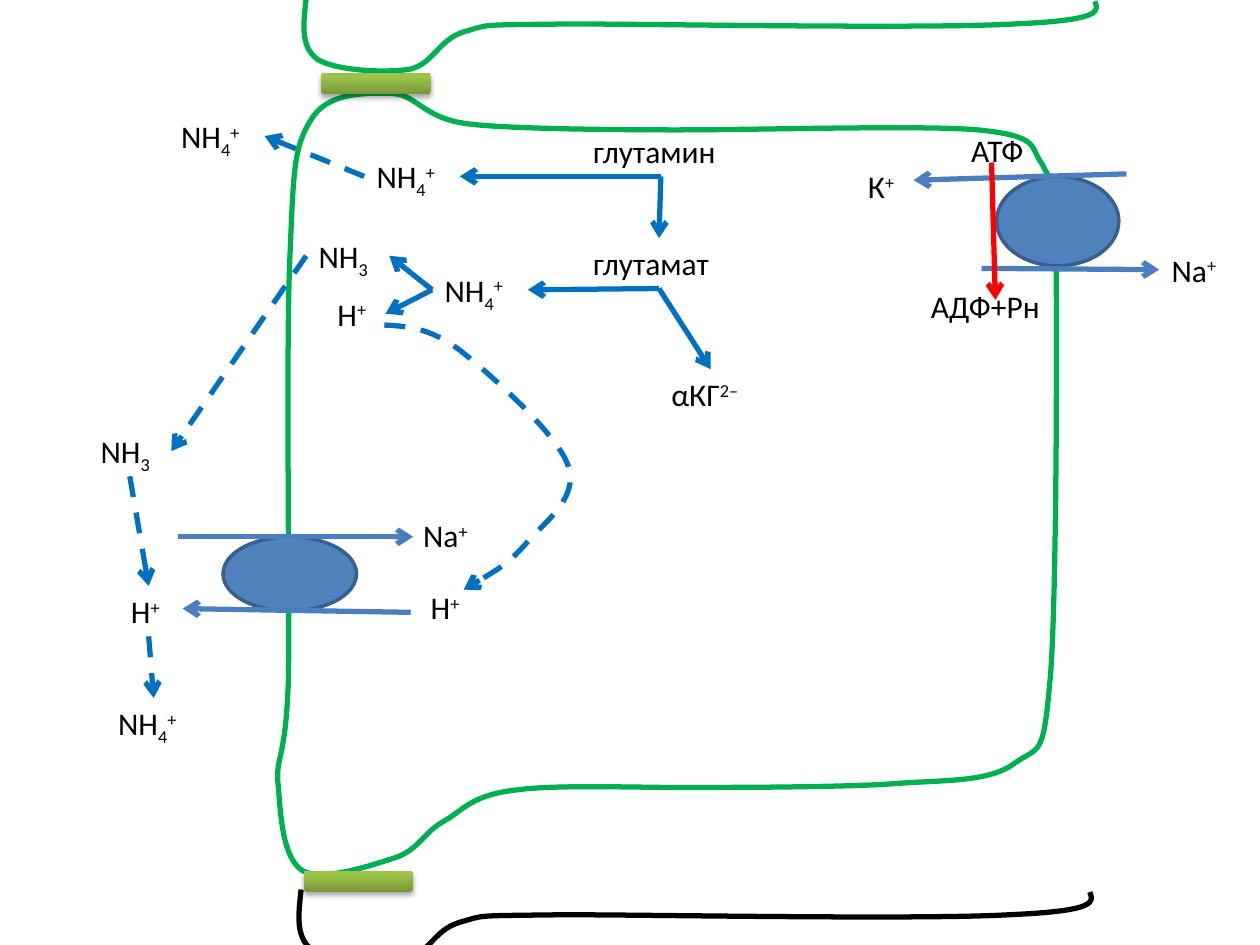
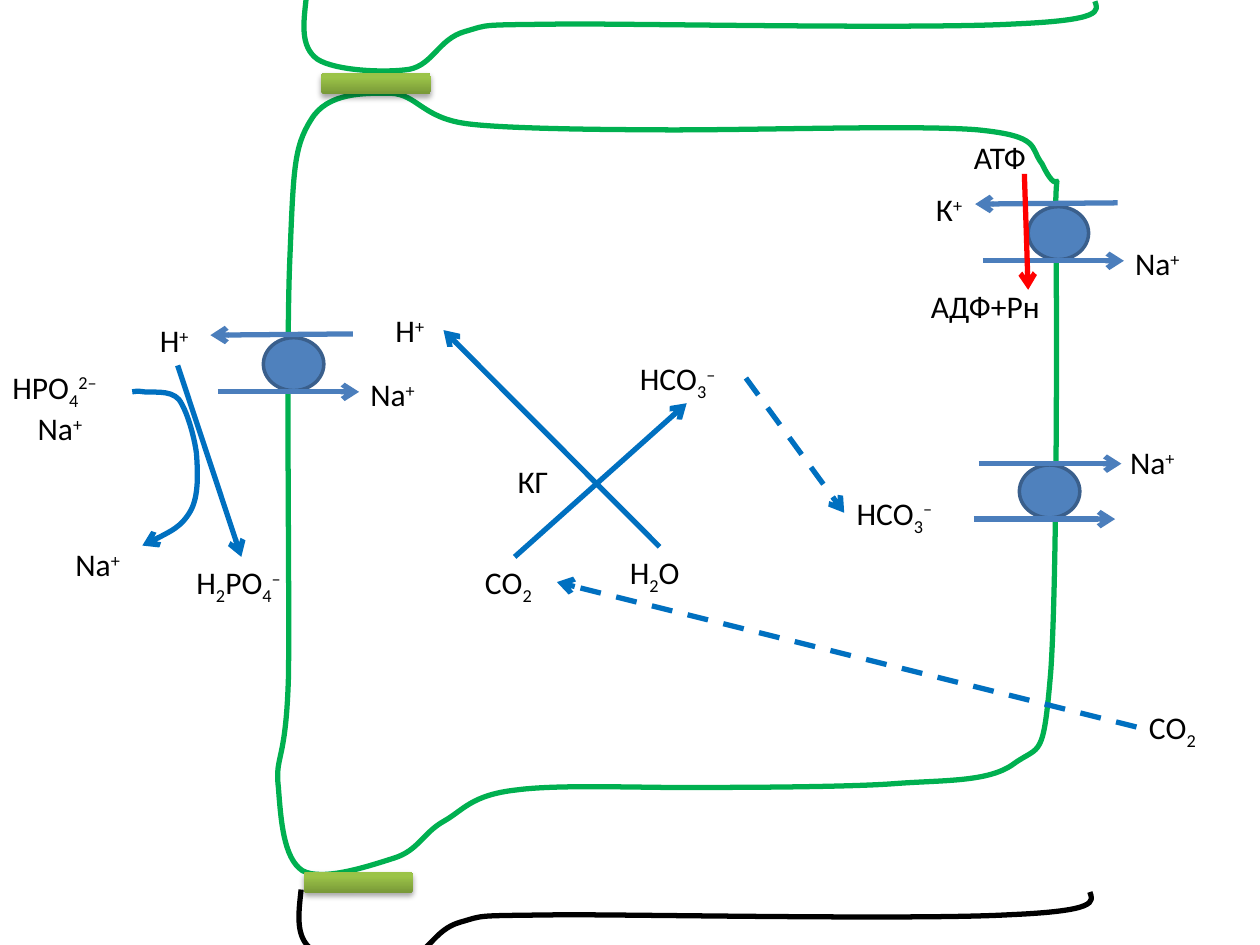
from dataclasses import dataclass
from typing import NamedTuple, Optional, Union

import pptx
import pptx.dml.color
import pptx.enum.dml
import pptx.enum.shapes
import pptx.enum.text
import pptx.oxml
import pptx.oxml.ns
import pptx.util

Inches = pptx.util.Inches
RGBColor = pptx.dml.color.RGBColor
SHAPES = pptx.enum.shapes.MSO_SHAPE
qn = pptx.oxml.ns.qn

BLACK = RGBColor(0x00, 0x00, 0x00)
MEMBRANE_GREEN = RGBColor(0x00, 0xB0, 0x50)
JUNCTION_DARK = RGBColor(0x77, 0x97, 0x37)
JUNCTION_LIGHT = RGBColor(0x9B, 0xC3, 0x48)
PUMP_FILL = RGBColor(0x4F, 0x81, 0xBD)
PUMP_EDGE = RGBColor(0x3A, 0x5F, 0x8C)
TRANSPORT_BLUE = RGBColor(0x4B, 0x7E, 0xBC)
REACTION_BLUE = RGBColor(0x00, 0x70, 0xC0)
ENERGY_RED = RGBColor(0xFF, 0x00, 0x00)

FONT = "Calibri"
LINE_WIDTH = pptx.util.Pt(3)
TOP, LEFT, BOTTOM, RIGHT = range(4)

# Runs are separated by "|"; "_" opens a subscript and "^" a superscript.
SODIUM, POTASSIUM, PROTON = "Na|^+", "К|^+", "Н|^+"
AMMONIUM, AMMONIA = "NН|_4|^+", "NН|_3"
BICARBONATE, CARBON_DIOXIDE, WATER = "НСО|_3|^–", "СО|_2", "Н|_2|О"
PHOSPHATE, DIHYDROPHOSPHATE = "НРО|_4|^2–", "Н|_2|РО|_4|^–"
ATP, ADP, ENZYME = "АТФ", "АДФ+Рн", "КГ"
GLUTAMINE, GLUTAMATE, KETOGLUTARATE = "глутамин", "глутамат", "αКГ|^2–"

BASELINES = {"_": "-25000", "^": "30000"}
LABEL_HEIGHT = 0.4
LABEL_WIDTHS = {
    SODIUM: 0.62, POTASSIUM: 0.45, PROTON: 0.48, AMMONIUM: 0.76, AMMONIA: 0.66,
    BICARBONATE: 0.94, CARBON_DIOXIDE: 0.67, WATER: 0.67, PHOSPHATE: 0.91,
    DIHYDROPHOSPHATE: 0.91, ATP: 0.69, ADP: 1.19, ENZYME: 0.49,
    GLUTAMINE: 1.27, GLUTAMATE: 1.24, KETOGLUTARATE: 0.82,
}

# Cubic curves: a start point, then three points for every segment.
CELL_OUTLINE = [
    (2.29, 5.37),
    (2.3, 4.68), (2.27, 2.82), (2.3, 2.08), (2.33, 1.35), (2.33, 1.17), (2.47, 0.95),
    (2.6, 0.73), (2.9, 0.74), (3.1, 0.74), (3.31, 0.75), (3.35, 0.93), (3.69, 0.98),
    (4.03, 1.03), (5.14, 1.03), (5.14, 1.03), (5.82, 1.04), (7.23, 0.99), (7.75, 1.03),
    (8.27, 1.08), (8.17, 1.17), (8.27, 1.3), (8.45, 1.67), (8.37, 1.13), (8.38, 1.8),
    (8.39, 2.47), (8.39, 4.62), (8.34, 5.33), (8.28, 6.04), (8.26, 5.91), (8.05, 6.06),
    (7.85, 6.21), (7.49, 6.19), (7.1, 6.22), (6.71, 6.25), (5.71, 6.25), (5.71, 6.25),
    (5.21, 6.26), (4.47, 6.22), (4.1, 6.27), (3.74, 6.31), (3.68, 6.43), (3.52, 6.52),
    (3.36, 6.61), (3.32, 6.75), (3.13, 6.81), (2.94, 6.87), (2.56, 7), (2.4, 6.91),
    (2.25, 6.81), (2.23, 6.51), (2.21, 6.25), (2.18, 5.99), (2.27, 6.07), (2.29, 5.37),
]
UPPER_NEIGHBOUR = [
    (2.43, -0.01),
    (2.41, 0.18), (2.38, 0.37), (2.52, 0.47), (2.66, 0.56), (3.05, 0.58), (3.25, 0.55),
    (3.44, 0.51), (3.48, 0.31), (3.69, 0.25), (3.9, 0.19), (3.78, 0.2), (4.51, 0.19),
    (5.23, 0.19), (7.35, 0.23), (8.05, 0.19), (8.75, 0.16), (8.72, 0.09), (8.69, 0.01),
]
LOWER_NEIGHBOUR = [(x - 0.04, y + 7.07) for x, y in UPPER_NEIGHBOUR]
PROTON_PATH = [
    (3.05, 2.58),
    (3.23, 2.59), (3.41, 2.6), (3.65, 2.78), (3.89, 2.97), (4.43, 3.45), (4.51, 3.7),
    (4.6, 3.96), (4.3, 4.16), (4.17, 4.32), (4.03, 4.48), (3.85, 4.58), (3.68, 4.68),
]
SODIUM_PATH = [
    (1.05, 3.11),
    (1.07, 3.11), (1.08, 3.1), (1.14, 3.11), (1.2, 3.12), (1.35, 3.09), (1.42, 3.17),
    (1.48, 3.25), (1.54, 3.45), (1.56, 3.6), (1.57, 3.75), (1.58, 3.94), (1.51, 4.06),
    (1.44, 4.18), (1.28, 4.26), (1.13, 4.33),
]


class Point(NamedTuple):
    x: float
    y: float


class Port(NamedTuple):
    """The middle of one side of a named label."""
    label: str
    side: int


@dataclass
class Label:
    name: str
    text: str
    left: float
    top: float


@dataclass
class Arrow:
    start: Union[Point, Port]
    end: Union[Point, Port]
    color: RGBColor = REACTION_BLUE
    dashed: bool = False


@dataclass
class Pump:
    left: float
    top: float
    width: float
    height: float
    flows: list[Arrow]


@dataclass
class CurvedArrow:
    points: list[tuple[float, float]]
    dashed: bool = False


@dataclass
class Scene:
    lower_junction_top: float
    pumps: list[Pump]
    energy: Arrow
    labels: list[Label]
    links: list[Arrow]
    curve: CurvedArrow


def flow(x1: float, y1: float, x2: float, y2: float, color: RGBColor = TRANSPORT_BLUE) -> Arrow:
    return Arrow(Point(x1, y1), Point(x2, y2), color)


def small_pump(left: float, top: float, exchange: bool = True) -> Pump:
    """An exchanger sends its upper flow to the left, a cotransporter to the right."""
    upper = (0.71, -0.03, -0.42, -0.02) if exchange else (-0.32, -0.01, 0.81, -0.01)
    flows = [flow(left + x1, top + y1, left + x2, top + y2)
             for x1, y1, x2, y2 in (upper, (-0.36, 0.43, 0.76, 0.43))]
    return Pump(left, top, 0.48, 0.42, flows)


def link(start: str, start_side: int, end: str, end_side: int, dashed: bool = False) -> Arrow:
    return Arrow(Port(start, start_side), Port(end, end_side), dashed=dashed)


def style_line(line, color: RGBColor, dashed: bool = False) -> None:
    line.color.rgb = color
    line.width = LINE_WIDTH
    if dashed:
        line.dash_style = pptx.enum.dml.MSO_LINE.DASH


def add_arrowhead(shape) -> None:
    ln = shape._element.spPr.find(qn("a:ln"))
    ln.append(pptx.oxml.parse_xml(f'<a:tailEnd {pptx.oxml.ns.nsdecls("a")} type="arrow"/>'))


def draw_curve(s, points: list[tuple[float, float]], color: RGBColor, closed: bool = False,
               dashed: bool = False, arrow: bool = False) -> None:
    emu = [(Inches(x), Inches(y)) for x, y in points]
    builder = s.shapes.build_freeform(*emu[0])
    builder.add_line_segments(emu[1:], close=closed)
    sp = builder.convert_to_shape()
    sp.shadow.inherit = False
    sp.fill.background()
    style_line(sp.line, color, dashed)
    if arrow:
        add_arrowhead(sp)
    segments = list(sp._element.iter(qn("a:lnTo")))
    for i in range(0, len(points) - 1, 3):
        triple = segments[i:i + 3]
        bezier = pptx.oxml.parse_xml(f'<a:cubicBezTo {pptx.oxml.ns.nsdecls("a")}/>')
        triple[0].addprevious(bezier)
        for segment in triple:
            bezier.append(segment[0])
            segment.getparent().remove(segment)


def draw_junction(s, left: float, top: float) -> None:
    sp = s.shapes.add_shape(SHAPES.ROUNDED_RECTANGLE, Inches(left), Inches(top),
                            Inches(0.87), Inches(0.17))
    sp.line.fill.background()
    sp.fill.gradient()
    sp.fill.gradient_angle = 90
    dark, light = sp.fill.gradient_stops
    dark.color.rgb, light.color.rgb = JUNCTION_DARK, JUNCTION_LIGHT
    dark.position, light.position = 0, 0.8
    sp._element.spPr.append(pptx.oxml.parse_xml(
        f'<a:effectLst {pptx.oxml.ns.nsdecls("a")}>'
        '<a:outerShdw blurRad="40000" dist="23000" dir="5400000" rotWithShape="0">'
        '<a:srgbClr val="000000"><a:alpha val="35000"/></a:srgbClr>'
        '</a:outerShdw></a:effectLst>'))


def draw_arrow(s, arrow: Arrow, labels: Optional[dict] = None) -> None:
    cxn = s.shapes.add_connector(pptx.enum.shapes.MSO_CONNECTOR.STRAIGHT, 0, 0, 0, 0)
    if isinstance(arrow.start, Port):
        cxn.begin_connect(labels[arrow.start.label], arrow.start.side)
        cxn.end_connect(labels[arrow.end.label], arrow.end.side)
    else:
        cxn.begin_x, cxn.begin_y = (Inches(v) for v in arrow.start)
        cxn.end_x, cxn.end_y = (Inches(v) for v in arrow.end)
    style_line(cxn.line, arrow.color, arrow.dashed)
    add_arrowhead(cxn)
    cxn._element.spPr.append(pptx.oxml.parse_xml(f'<a:effectLst {pptx.oxml.ns.nsdecls("a")}/>'))


def draw_pump(s, pump: Pump) -> None:
    sp = s.shapes.add_shape(SHAPES.OVAL, Inches(pump.left), Inches(pump.top),
                            Inches(pump.width), Inches(pump.height))
    sp.shadow.inherit = False
    sp.fill.solid()
    sp.fill.fore_color.rgb = PUMP_FILL
    sp.line.color.rgb = PUMP_EDGE
    sp.line.width = pptx.util.Pt(2)
    for arrow in pump.flows:
        draw_arrow(s, arrow)


def draw_label(s, label: Label):
    box = s.shapes.add_textbox(Inches(label.left), Inches(label.top),
                               Inches(LABEL_WIDTHS[label.text]), Inches(LABEL_HEIGHT))
    tf = box.text_frame
    tf.word_wrap = False
    tf.auto_size = pptx.enum.text.MSO_AUTO_SIZE.SHAPE_TO_FIT_TEXT
    for part in label.text.split("|"):
        r = tf.paragraphs[0].add_run()
        r.text = part.lstrip("_^")
        r.font.name = FONT
        r.font.size = pptx.util.Pt(18)
        r.font.color.rgb = BLACK
        if part[0] in BASELINES:
            r.font._element.set("baseline", BASELINES[part[0]])
    return box


def draw_scene(prs, scene: Scene) -> None:
    s = prs.slides.add_slide(prs.slide_layouts[6])
    draw_curve(s, CELL_OUTLINE, MEMBRANE_GREEN, closed=True)
    draw_curve(s, UPPER_NEIGHBOUR, MEMBRANE_GREEN)
    draw_curve(s, LOWER_NEIGHBOUR, BLACK)
    draw_junction(s, 2.55, 0.58)
    draw_junction(s, 2.41, scene.lower_junction_top)
    for pump in scene.pumps:
        draw_pump(s, pump)
    draw_arrow(s, scene.energy)
    labels = {label.name: draw_label(s, label) for label in scene.labels}
    for arrow in scene.links:
        draw_arrow(s, arrow, labels)
    draw_curve(s, scene.curve.points, REACTION_BLUE, dashed=scene.curve.dashed, arrow=True)


AMMONIAGENESIS = Scene(
    lower_junction_top=6.91,
    pumps=[
        Pump(7.91, 1.4, 0.97, 0.71, [flow(8.94, 1.38, 7.25, 1.43), flow(7.79, 2.13, 9.2, 2.14)]),
        Pump(1.77, 4.26, 1.06, 0.59, [flow(3.26, 4.86, 1.45, 4.83), flow(1.41, 4.26, 3.28, 4.26)]),
    ],
    energy=flow(7.87, 1.29, 7.9, 2.38, ENERGY_RED),
    labels=[
        Label("Na blood", SODIUM, 9.2, 1.94), Label("K", POTASSIUM, 6.79, 1.28),
        Label("ATP", ATP, 7.61, 0.99), Label("ADP", ADP, 7.29, 2.23),
        Label("H lumen", PROTON, 0.94, 4.65), Label("Na cell", SODIUM, 3.26, 4.05),
        Label("H pump", PROTON, 3.32, 4.62), Label("H cell", PROTON, 2.58, 2.29),
        Label("glutamine", GLUTAMINE, 4.61, 1), Label("glutamate", GLUTAMATE, 4.61, 1.89),
        Label("ketoglutarate", KETOGLUTARATE, 5.23, 2.93),
        Label("NH4 first", AMMONIUM, 2.89, 1.2), Label("NH4 second", AMMONIUM, 3.43, 2.1),
        Label("NH4 lumen", AMMONIUM, 1.34, 0.88), Label("NH4 urine", AMMONIUM, 0.84, 5.54),
        Label("NH3 cell", AMMONIA, 2.43, 1.83), Label("NH3 lumen", AMMONIA, 0.7, 3.38),
    ],
    links=[
        link("glutamine", BOTTOM, "glutamate", TOP),
        link("glutamine", BOTTOM, "NH4 first", RIGHT),
        link("NH4 first", LEFT, "NH4 lumen", RIGHT, dashed=True),
        link("glutamate", BOTTOM, "ketoglutarate", TOP),
        link("glutamate", BOTTOM, "NH4 second", RIGHT),
        link("NH4 second", LEFT, "NH3 cell", RIGHT),
        link("NH4 second", LEFT, "H cell", RIGHT),
        link("NH3 cell", LEFT, "NH3 lumen", RIGHT, dashed=True),
        link("NH3 lumen", BOTTOM, "H lumen", TOP, dashed=True),
        link("H lumen", BOTTOM, "NH4 urine", TOP, dashed=True),
    ],
    curve=CurvedArrow(PROTON_PATH, dashed=True),
)

ACIDOGENESIS = Scene(
    lower_junction_top=6.92,
    pumps=[small_pump(8.16, 1.64), small_pump(2.09, 2.68), small_pump(8.09, 3.69, exchange=False)],
    energy=flow(8.13, 1.38, 8.16, 2.3, ENERGY_RED),
    labels=[
        Label("Na blood", SODIUM, 8.91, 1.89), Label("K", POTASSIUM, 7.33, 1.46),
        Label("ATP", ATP, 7.63, 1.05), Label("ADP", ADP, 7.29, 2.23),
        Label("Na cell", SODIUM, 2.84, 2.93), Label("Na cotransport", SODIUM, 8.87, 3.47),
        Label("Na salt", SODIUM, 0.2, 3.2), Label("Na freed", SODIUM, 0.5, 4.28),
        Label("H lumen", PROTON, 1.17, 2.5), Label("H cell", PROTON, 3.04, 2.42),
        Label("HPO4", PHOSPHATE, 0, 2.87), Label("H2PO4", DIHYDROPHOSPHATE, 1.46, 4.42),
        Label("HCO3 formed", BICARBONATE, 4.98, 2.8), Label("HCO3 leaving", BICARBONATE, 6.7, 3.87),
        Label("water", WATER, 4.9, 4.34), Label("enzyme", ENZYME, 4.01, 3.62),
        Label("CO2 cell", CARBON_DIOXIDE, 3.75, 4.42), Label("CO2 blood", CARBON_DIOXIDE, 9.02, 5.57),
    ],
    links=[
        link("H lumen", BOTTOM, "H2PO4", TOP),
        link("HCO3 formed", RIGHT, "HCO3 leaving", LEFT, dashed=True),
        link("CO2 cell", TOP, "HCO3 formed", BOTTOM),
        link("water", TOP, "H cell", RIGHT),
        link("CO2 blood", LEFT, "CO2 cell", RIGHT, dashed=True),
    ],
    curve=CurvedArrow(SODIUM_PATH),
)


def main() -> None:
    prs = pptx.Presentation()
    prs.slide_width, prs.slide_height = Inches(10), Inches(7.5)
    for scene in (AMMONIAGENESIS, ACIDOGENESIS):
        draw_scene(prs, scene)
    prs.save("out.pptx")


if __name__ == "__main__":
    main()
